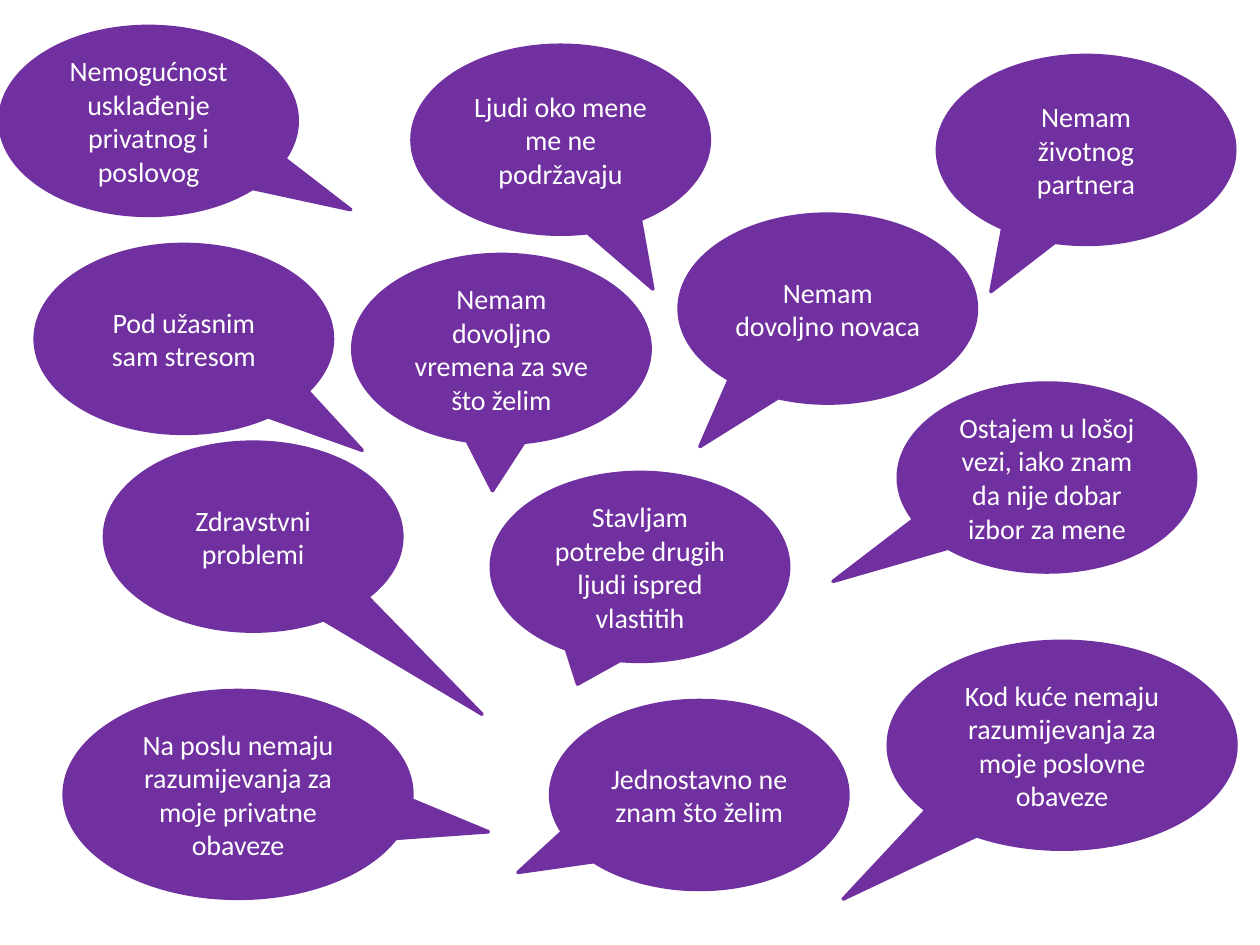
from dataclasses import dataclass

from pptx import Presentation
from pptx.dml.color import RGBColor
from pptx.enum.shapes import MSO_SHAPE
from pptx.enum.text import MSO_ANCHOR, PP_ALIGN
from pptx.slide import Slide
from pptx.util import Inches, Pt

PURPLE = RGBColor(0x70, 0x30, 0xA0)
WHITE = RGBColor(0xFF, 0xFF, 0xFF)
CALLOUT = MSO_SHAPE.OVAL_CALLOUT
CENTER = PP_ALIGN.CENTER
MIDDLE = MSO_ANCHOR.MIDDLE
BLANK_LAYOUT = 6
SMALL = (2.36, 1.5)
LARGE = (2.76, 1.65)


@dataclass(frozen=True)
class Bubble:
    text: str
    left: float
    top: float
    tail_x: float
    tail_y: float
    size: tuple[float, float] = SMALL


BUBBLES = [
    Bubble("Nemogućnost usklađenje privatnog i poslovog", 0, 0.21, 0.68, 0.47),
    Bubble("Pod užasnim sam stresom", 0.28, 1.94, 0.6, 0.59),
    Bubble("Nemam dovoljno vremena za sve što želim", 2.8, 2.02, -0.03, 0.75),
    Bubble("Nemam dovoljno novaca", 5.39, 1.7, -0.43, 0.73),
    Bubble("Zdravstvni problemi", 0.83, 3.51, 0.77, 0.94),
    Bubble("Stavljam potrebe drugih ljudi ispred vlastitih", 3.9, 3.75, -0.21, 0.62),
    Bubble("Jednostavno ne znam što želim", 4.37, 5.56, -0.61, 0.41),
    Bubble("Ljudi oko mene me ne podržavaju", 3.27, 0.36, 0.31, 0.79),
    Bubble("Nemam životnog partnera", 7.44, 0.44, -0.32, 0.75),
    Bubble("Ostajem u lošoj vezi, iako znam da nije dobar izbor za mene",
           7.13, 3.04, -0.72, 0.55),
    Bubble("Na poslu nemaju razumijevanja za moje privatne obaveze",
           0.51, 5.48, 0.72, 0.18, LARGE),
    Bubble("Kod kuće nemaju razumijevanja za moje poslovne obaveze",
           7.05, 5.09, -0.63, 0.74, LARGE),
]


def add_bubble(slide: Slide, bubble: Bubble) -> None:
    width, height = bubble.size
    shape = slide.shapes.add_shape(
        CALLOUT, Inches(bubble.left), Inches(bubble.top), Inches(width), Inches(height)
    )
    shape.adjustments[0] = bubble.tail_x
    shape.adjustments[1] = bubble.tail_y
    shape.shadow.inherit = False
    shape.fill.solid()
    shape.fill.fore_color.rgb = PURPLE
    shape.line.color.rgb = PURPLE
    shape.line.width = Pt(2)

    text_frame = shape.text_frame
    text_frame.word_wrap = True
    text_frame.vertical_anchor = MIDDLE
    paragraph = text_frame.paragraphs[0]
    paragraph.alignment = CENTER
    run = paragraph.add_run()
    run.text = bubble.text
    run.font.name = "Calibri"
    run.font.size = Pt(16)
    run.font.color.rgb = WHITE


def main() -> None:
    presentation = Presentation()
    presentation.slide_width = Inches(10)
    presentation.slide_height = Inches(7.5)
    slide = presentation.slides.add_slide(presentation.slide_layouts[BLANK_LAYOUT])
    for bubble in BUBBLES:
        add_bubble(slide, bubble)
    presentation.save("out.pptx")


if __name__ == "__main__":
    main()
